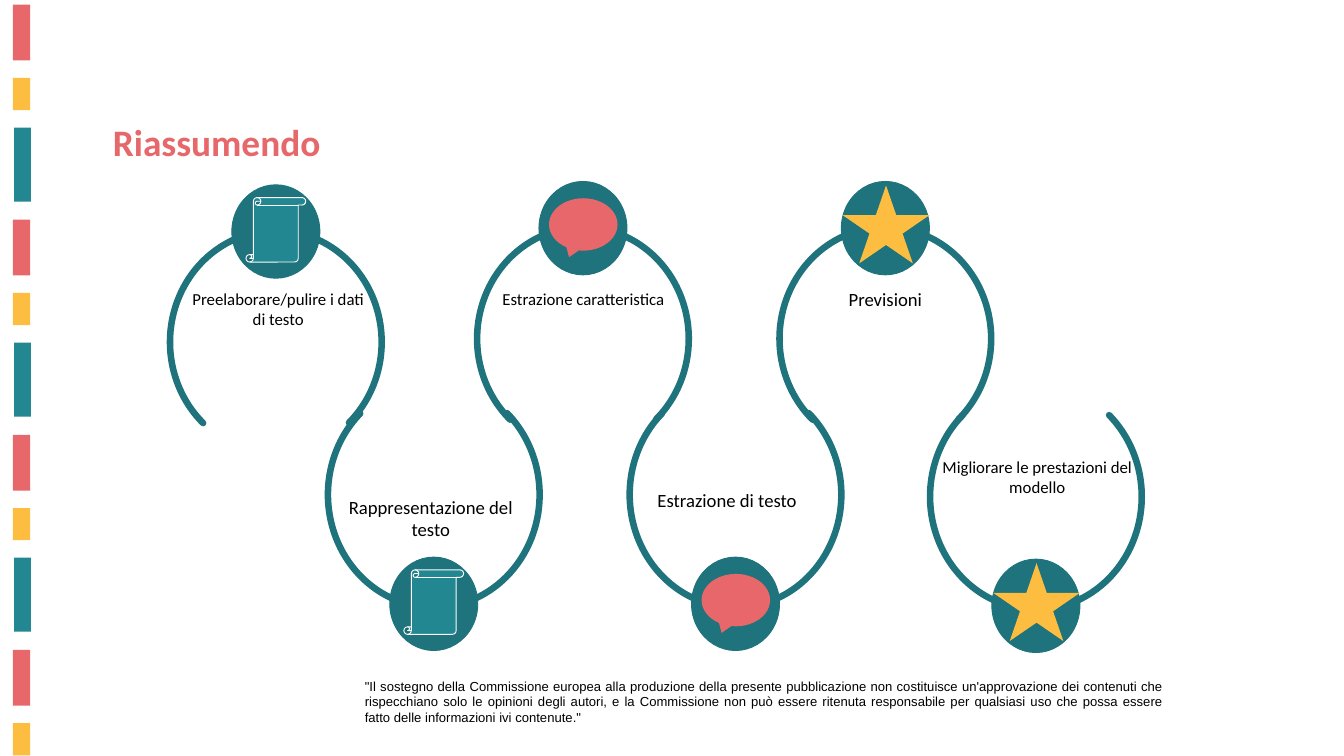
from dataclasses import dataclass
from itertools import count, cycle

from pptx import Presentation
from pptx.dml.color import RGBColor
from pptx.enum.shapes import MSO_SHAPE
from pptx.enum.text import MSO_ANCHOR, PP_ALIGN
from pptx.oxml.ns import qn
from pptx.util import Inches, Pt

COLUMNS, ROWS = 20, 11.25


@dataclass(frozen=True)
class Theme:
    coral: str = "E8676A"
    gold: str = "FDBD40"
    teal: str = "238791"
    dark_teal: str = "1E737C"
    title_coral: str = "E7686A"
    black: str = "000000"
    white: str = "FFFFFF"
    heading_font: str = "Calibri"
    note_font: str = "Arial"
    title_size: int = 40
    large_size: int = 20
    label_size: int = 18
    note_size: int = 14
    arc_width: int = 7
    thin_width: int = 1


@dataclass(frozen=True)
class Icon:
    preset: MSO_SHAPE
    left: float
    top: float
    width: float
    height: float
    fill: str
    line: str | None = None


@dataclass(frozen=True)
class Step:
    text: str
    left: float
    top: float
    hanging: bool
    icon: Icon
    label_box: tuple
    size: int


THEME = Theme()
SCROLL = Icon(MSO_SHAPE.VERTICAL_SCROLL, 1.13, 0.19, 0.89, 0.96, THEME.teal, THEME.white)
BUBBLE = Icon(MSO_SHAPE.OVAL_CALLOUT, 1.07, 0.25, 1.02, 0.78, THEME.coral)
STAR = Icon(MSO_SHAPE.STAR_5_POINT, 0.94, 0.06, 1.29, 1.16, THEME.gold)

STEPS = [
    Step("Preelaborare/pulire i dati di testo", 2.53, 3.43, False, SCROLL,
         (2.69, 4.24, 2.9, 0.71), THEME.label_size),
    Step("Rappresentazione del testo", 4.88, 5.68, True, SCROLL,
         (4.87, 7.33, 3.08, 0.77), THEME.large_size),
    Step("Estrazione caratteristica", 7.1, 3.38, False, BUBBLE,
         (7.14, 4.24, 3.08, 0.4), THEME.label_size),
    Step("Estrazione di testo", 9.37, 5.68, True, BUBBLE,
         (9.37, 7.23, 2.9, 0.77), THEME.large_size),
    Step("Previsioni", 11.6, 3.38, False, STAR,
         (11.8, 4.24, 2.75, 0.44), THEME.large_size),
    Step("Migliorare le prestazioni del modello", 13.84, 5.71, True, STAR,
         (13.89, 6.75, 3.09, 0.71), THEME.label_size),
]

NOTE = (
    "\"Il sostegno della Commissione europea alla produzione della presente "
    "pubblicazione non costituisce un'approvazione dei contenuti che rispecchiano "
    "solo le opinioni degli autori, e la Commissione non può essere ritenuta "
    "responsabile per qualsiasi uso che possa essere fatto delle informazioni "
    "ivi contenute.\""
)


def grid(*lengths):
    return [Inches(length) for length in lengths]


def add_preset(page, preset, box, fill=None, line=None, width=THEME.thin_width):
    shape = page.shapes.add_shape(preset, *grid(*box))
    shape.shadow.inherit = False
    if fill:
        shape.fill.solid()
        shape.fill.fore_color.rgb = RGBColor.from_string(fill)
    else:
        shape.fill.background()
    if line:
        shape.line.color.rgb = RGBColor.from_string(line)
        shape.line.width = Pt(width)
    else:
        shape.line.fill.background()
    return shape


def write_text(box, text, font, size, color, align, bold=False):
    frame = box.text_frame
    frame.word_wrap = True
    frame.vertical_anchor = MSO_ANCHOR.TOP
    para = frame.paragraphs[0]
    para.text = text
    para.alignment = align
    para.font.name = font
    para.font.size = Pt(size)
    para.font.bold = bold
    para.font.color.rgb = RGBColor.from_string(color)


def add_text(page, box, *style):
    write_text(page.shapes.add_textbox(*grid(*box)), *style)


def add_title(page):
    title = page.shapes.title
    title.left, title.top, title.width, title.height = grid(1.58, 1.72, 6.58, 0.77)
    write_text(title, "Riassumendo", THEME.heading_font, THEME.title_size,
               THEME.title_coral, PP_ALIGN.LEFT, bold=True)


def add_side_stripes(page):
    pattern = [
        (0.19, 0.07, 0.26, 0.83, THEME.coral),
        (0.19, 1.16, 0.26, 0.48, THEME.gold),
        (0.21, 1.9, 0.25, 1.1, THEME.teal),
    ]
    for index, (left, top, width, height, color) in zip(count(), cycle(pattern)):
        top += index // len(pattern) * 3.2
        if top >= ROWS:
            break
        add_preset(page, MSO_SHAPE.RECTANGLE,
                   (left, top, width, min(height, ROWS - top)), color)


def add_arc(page, step):
    height = 3.36 if step.hanging else 3.32
    arc = add_preset(page, MSO_SHAPE.ARC, (step.left, step.top, 3.15, height),
                     line=THEME.dark_teal, width=THEME.arc_width)
    arc.adjustments[0], arc.adjustments[1] = 79.141, 28.684
    arc.rotation = 180 if step.hanging else 0
    arc.element.spPr.find(qn("a:ln")).set("cap", "rnd")


def add_badge(page, step):
    top = step.top + (2.61 if step.hanging else -0.68)
    add_preset(page, MSO_SHAPE.OVAL, (step.left + 0.92, top, 1.31, 1.39),
               THEME.dark_teal, THEME.dark_teal)
    icon = step.icon
    add_preset(page, icon.preset,
               (step.left + icon.left, top + icon.top, icon.width, icon.height),
               icon.fill, icon.line)


def add_step(page, step):
    add_arc(page, step)
    add_badge(page, step)
    add_text(page, step.label_box, step.text, THEME.heading_font, step.size,
             THEME.black, PP_ALIGN.CENTER)


def main():
    deck = Presentation()
    deck.slide_width, deck.slide_height = grid(COLUMNS, ROWS)
    page = deck.slides.add_slide(deck.slide_layouts[5])
    add_side_stripes(page)
    add_text(page, (5.33, 10.04, 12.08, 0.81), NOTE, THEME.note_font,
             THEME.note_size, THEME.black, PP_ALIGN.JUSTIFY)
    add_title(page)
    for step in STEPS:
        add_step(page, step)
    deck.save("out.pptx")


if __name__ == "__main__":
    main()
